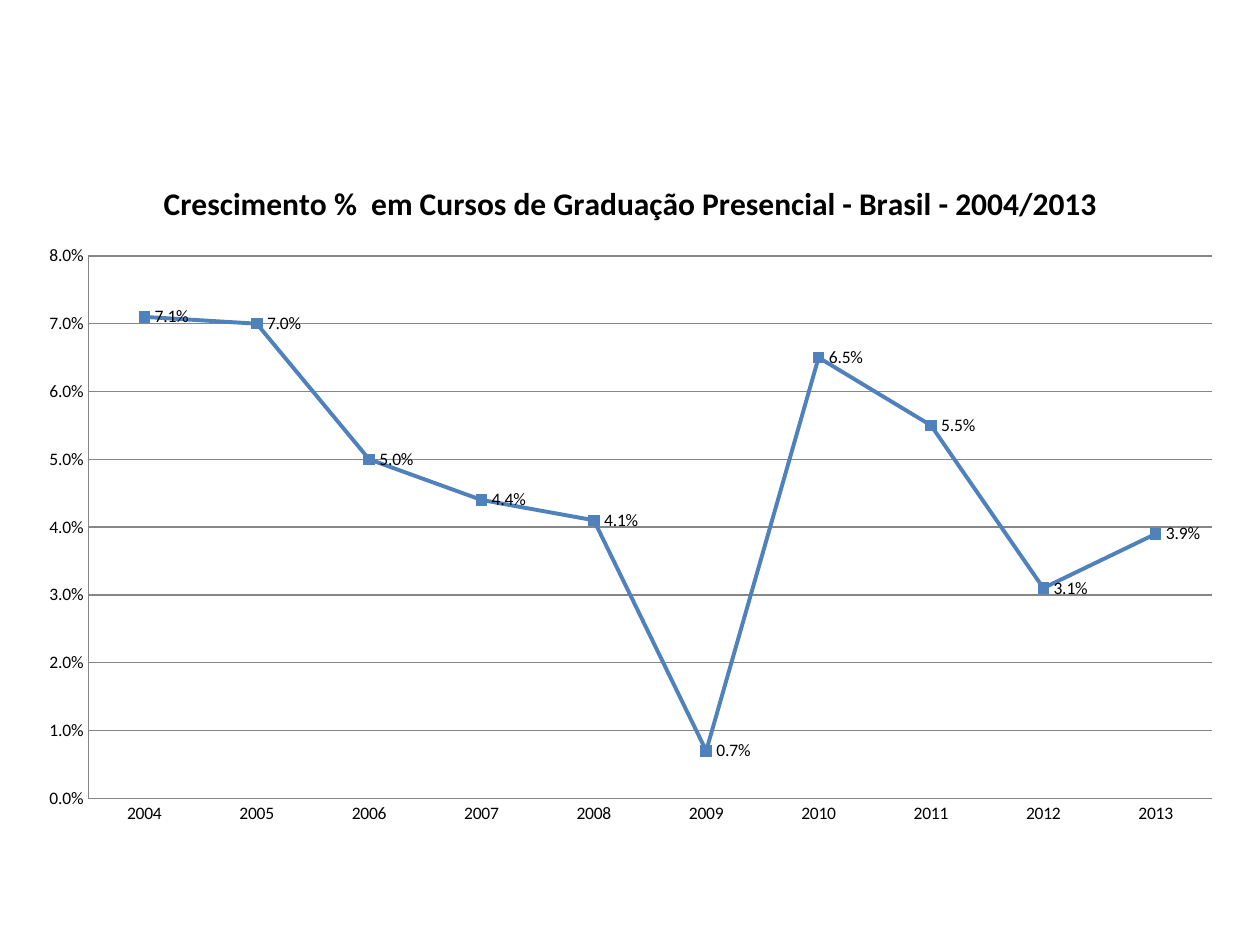
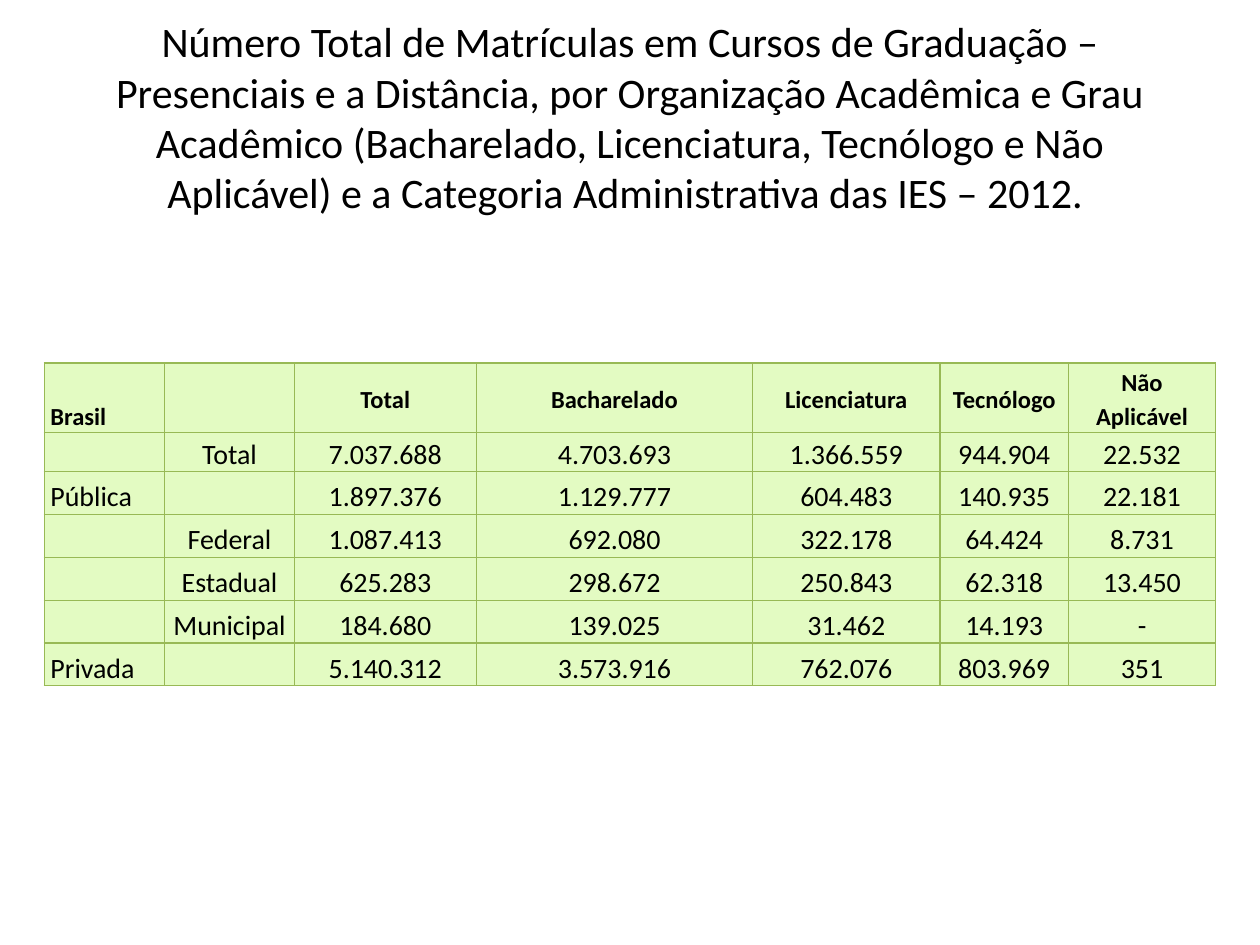
"""Builds two slides on undergraduate enrolment in Brazil: a growth chart and a table."""
from lxml import etree
from pptx import Presentation
from pptx.chart.data import CategoryChartData
from pptx.dml.color import RGBColor
from pptx.enum.chart import XL_CHART_TYPE, XL_LABEL_POSITION, XL_MARKER_STYLE, XL_TICK_MARK
from pptx.enum.text import MSO_ANCHOR, MSO_AUTO_SIZE, PP_ALIGN
from pptx.oxml import parse_xml
from pptx.oxml.ns import nsdecls, qn
from pptx.util import Pt

LINE_MARKERS = XL_CHART_TYPE.LINE_MARKERS
RIGHT = XL_LABEL_POSITION.RIGHT
SQUARE = XL_MARKER_STYLE.SQUARE
NO_TICK = XL_TICK_MARK.NONE
MIDDLE, BOTTOM = MSO_ANCHOR.MIDDLE, MSO_ANCHOR.BOTTOM
LEFT, CENTER = PP_ALIGN.LEFT, PP_ALIGN.CENTER

FONT = "Calibri"
BLACK = RGBColor(0x00, 0x00, 0x00)
BLUE = RGBColor(0x4F, 0x81, 0xBD)
GRAY = RGBColor(0x86, 0x86, 0x86)
PALE_GREEN = RGBColor(0xE3, 0xFB, 0xC2)
GREEN = RGBColor(0x98, 0xB9, 0x55)


def add_text(tf, text, size, bold=False, align=CENTER, spacing=None):
    p = tf.paragraphs[0]
    p.alignment = align
    p.line_spacing = spacing
    if not text:
        etree.SubElement(p._p, qn("a:endParaRPr"), sz=str(size * 100))
        return
    r = p.add_run()
    r.text = text
    r.font.name = FONT
    r.font.size = Pt(size)
    r.font.bold = bold
    r.font.color.rgb = BLACK


def set_borders(cell):
    tcPr = cell._tc.get_or_add_tcPr()
    for i, side in enumerate(("lnL", "lnR", "lnT", "lnB")):
        tcPr.insert(i, parse_xml(
            f'<a:{side} {nsdecls("a")} w="{Pt(0.75)}"><a:solidFill>'
            f'<a:srgbClr val="{GREEN}"/></a:solidFill></a:{side}>'))


prs = Presentation()
prs.slide_width, prs.slide_height = Pt(720), Pt(540)

s = prs.slides.add_slide(prs.slide_layouts[6])
data = CategoryChartData(number_format="0.0%")
data.categories = [str(year) for year in range(2004, 2014)]
data.add_series("Series 1", (0.071, 0.070, 0.050, 0.044, 0.041,
                             0.007, 0.065, 0.055, 0.031, 0.039))
chart = s.shapes.add_chart(LINE_MARKERS, Pt(14.4), Pt(88.6), Pt(692), Pt(389.5), data).chart
chart.font.name = FONT
chart.font.size = Pt(10)
chart.font.color.rgb = BLACK
chart.has_legend = False
chart.has_title = True
add_text(chart.chart_title.text_frame,
         "Crescimento %  em Cursos de Graduação Presencial - Brasil - 2004/2013", 18, bold=True)
chart.chart_title.include_in_layout = False

for axis in (chart.category_axis, chart.value_axis):
    axis.major_tick_mark = axis.minor_tick_mark = NO_TICK
    axis.format.line.color.rgb = GRAY
    axis.format.line.width = Pt(0.75)
value_axis = chart.value_axis
value_axis.minimum_scale, value_axis.maximum_scale, value_axis.major_unit = 0, 0.08, 0.01
value_axis.tick_labels.number_format = "0.0%"
value_axis.tick_labels.number_format_is_linked = False
value_axis.major_gridlines.format.line.color.rgb = GRAY
value_axis.major_gridlines.format.line.width = Pt(0.75)

plot = chart.plots[0]
plot.vary_by_categories = False
series = plot.series[0]
series.smooth = False
series.format.line.color.rgb = BLUE
series.format.line.width = Pt(2.25)
series.marker.style = SQUARE
series.marker.size = 6
series.marker.format.fill.solid()
series.marker.format.fill.fore_color.rgb = BLUE
series.marker.format.line.color.rgb = BLUE
labels = series.data_labels
labels.show_value = True
labels.position = RIGHT
labels.number_format = "0.0%"
labels.number_format_is_linked = False

s = prs.slides.add_slide(prs.slide_layouts[5])
title = s.shapes.title
title.left, title.top, title.width, title.height = Pt(36), Pt(21.6), Pt(648), Pt(90)
tf = title.text_frame
tf.word_wrap = True
tf.auto_size = MSO_AUTO_SIZE.NONE
tf.vertical_anchor = MIDDLE
add_text(tf, "Número Total de Matrículas em Cursos de Graduação – Presenciais e a Distância, "
         "por Organização Acadêmica e Grau Acadêmico (Bacharelado, Licenciatura, Tecnólogo "
         "e Não Aplicável) e a Categoria Administrativa das IES – 2012. ", 24)

rows = [
    ("Brasil", "", "Total", "Bacharelado", "Licenciatura", "Tecnólogo", "Não Aplicável"),
    ("", "Total", "7.037.688", "4.703.693", "1.366.559", "944.904", "22.532"),
    ("Pública", "", "1.897.376", "1.129.777", "604.483", "140.935", "22.181"),
    ("", "Federal", "1.087.413", "692.080", "322.178", "64.424", "8.731"),
    ("", "Estadual", "625.283", "298.672", "250.843", "62.318", "13.450"),
    ("", "Municipal", "184.680", "139.025", "31.462", "14.193", "-"),
    ("Privada", "", "5.140.312", "3.573.916", "762.076", "803.969", "351"),
]
col_widths = (69, 74, 104, 158, 107, 73.5, 84)
row_heights = (39.5, 22.6) + (24.5,) * 5
table = s.shapes.add_table(len(rows), len(col_widths), Pt(25.2), Pt(207.4),
                           Pt(sum(col_widths)), Pt(sum(row_heights))).table
table.horz_banding = False
for column, width in zip(table.columns, col_widths):
    column.width = Pt(width)
for i, (values, height) in enumerate(zip(rows, row_heights)):
    table.rows[i].height = Pt(height)
    for j, value in enumerate(values):
        cell = table.cell(i, j)
        cell.margin_left = cell.margin_right = Pt(3.6)
        cell.margin_top = cell.margin_bottom = 0
        cell.vertical_anchor = MIDDLE if i == 0 and j > 0 else BOTTOM
        cell.fill.solid()
        cell.fill.fore_color.rgb = PALE_GREEN
        set_borders(cell)
        add_text(cell.text_frame, value, 14 if i == 0 else 16, bold=i == 0,
                 align=CENTER if j else LEFT, spacing=1.15)

prs.save("out.pptx")
